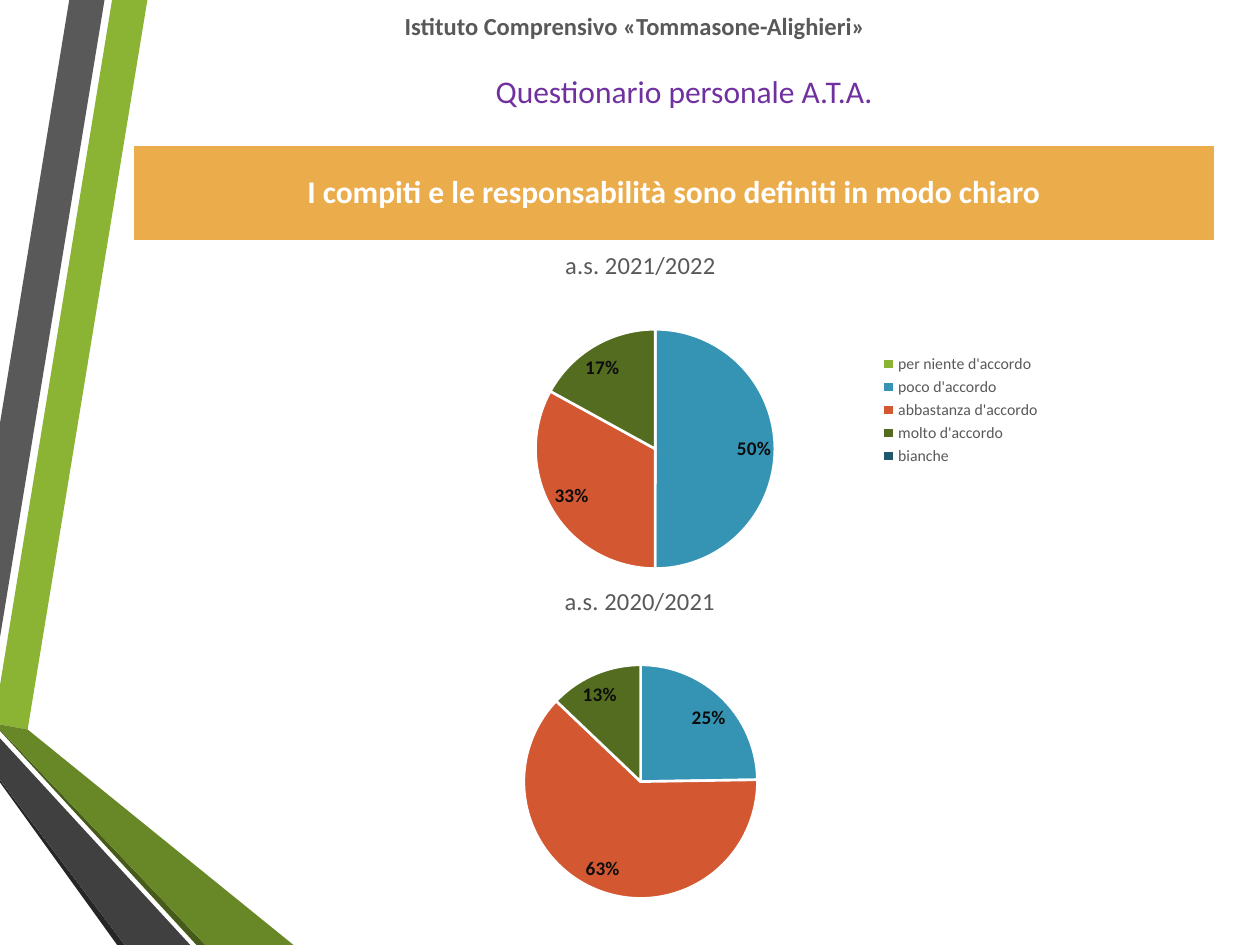
"""Build the staff questionnaire slide with two yearly pie charts."""
import pptx
import pptx.chart.data
import pptx.enum.chart
import pptx.enum.text
import pptx.oxml
import pptx.oxml.ns
import pptx.util
from pptx.dml.color import RGBColor
from pptx.util import Inches

FONT = "Calibri"
COLORS = {
    "green": "8BB434", "gray": "595959", "black": "262626", "olive": "465A1A",
    "moss": "688727", "charcoal": "404040", "blue": "3594B4", "red": "D35731",
    "forest": "536C1F", "petrol": "20596C", "amber": "EBAC4B",
    "purple": "7030A0", "white": "FFFFFF", "ink": "0D0D0D",
}
SCHOOL = "Istituto Comprensivo «Tommasone-Alighieri»"
TITLE = "Questionario personale A.T.A."
QUESTION = "I compiti e le responsabilità sono definiti in modo chiaro"
ANSWERS = ["per niente d'accordo", "poco d'accordo", "abbastanza d'accordo",
           "molto d'accordo", "bianche"]
SLICES = ["green", "blue", "red", "forest", "petrol"]
RIBBONS = [
    ("green", [(0, 5.44), (0, 5.75), (0.22, 5.79), (1.17, 0), (0.89, 0)]),
    ("gray", [(0.83, 0), (0.55, 0), (0, 3.36), (0, 5.06)]),
    ("black", [(0, 6.19), (0, 6.21), (0.93, 7.5), (0.99, 7.5)]),
    ("olive", [(0, 5.79), (0, 5.8), (1.56, 7.5), (1.63, 7.5)]),
    ("moss", [(0, 5.79), (1.63, 7.5), (2.33, 7.5), (0.22, 5.79), (0, 5.75)]),
    ("charcoal", [(0, 6.19), (0.99, 7.5), (1.51, 7.5), (0, 5.86)]),
]
CHARTS = [
    {"title": "a.s. 2020/2021", "cats": ["1", "2", "3", "4", "5"],
     "values": [0, 25, 63, 13, 0], "box": (2.8, 4.49, 4.57, 2.81),
     "title_at": (0.36, 0.04), "pie": (0.29, 0.28, 0.42, 0.66), "legend": None},
    {"title": "a.s. 2021/2022", "cats": ANSWERS,
     "values": [0, 50, 33, 17, 0], "box": (3.35, 1.85, 5, 2.81),
     "title_at": (0.22, 0.03), "pie": (0.18, 0.27, 0.38, 0.68),
     "legend": (0.72, 0.33, 0.27, 0.34)},
]


def rgb(name):
    return RGBColor.from_string(COLORS[name])


def style(font, size, color, bold=False):
    font.name, font.size, font.bold = FONT, pptx.util.Pt(size), bold
    font.color.rgb = rgb(color)


def write(tf, text, size, color, bold=False):
    p = tf.paragraphs[0]
    p.alignment = pptx.enum.text.PP_ALIGN.CENTER
    r = p.add_run()
    r.text = text
    style(r.font, size, color, bold)


def set_layout(element, index, position, inner=False):
    for old in element.findall(pptx.oxml.ns.qn("c:layout")):
        element.remove(old)
    target = '<c:layoutTarget val="inner"/>' if inner else ""
    modes = '<c:xMode val="edge"/><c:yMode val="edge"/>'
    sizes = "".join(f'<c:{k} val="{v}"/>' for k, v in zip("xywh", position))
    element.insert(index, pptx.oxml.parse_xml(
        f'<c:layout {pptx.oxml.ns.nsdecls("c")}><c:manualLayout>'
        f'{target}{modes}{sizes}</c:manualLayout></c:layout>'))


def add_ribbon(s, color, points):
    corners = [(Inches(x), Inches(y)) for x, y in points]
    builder = s.shapes.build_freeform(*corners[0])
    builder.add_line_segments(corners[1:], close=True)
    sp = builder.convert_to_shape()
    sp.shadow.inherit = False
    sp.fill.solid()
    sp.fill.fore_color.rgb = rgb(color)
    sp.line.fill.background()


def add_pie(s, item):
    data = pptx.chart.data.CategoryChartData()
    data.categories = item["cats"]
    data.add_series("Series 1", item["values"])
    chart = s.shapes.add_chart(pptx.enum.chart.XL_CHART_TYPE.PIE,
                               *map(Inches, item["box"]), data).chart
    chart.font.name, chart.font.size = FONT, pptx.util.Pt(10)
    chart.has_title = True
    write(chart.chart_title.text_frame, item["title"], 14, "gray")
    chart.chart_title.include_in_layout = False
    set_layout(chart.chart_title._element, 1, item["title_at"])
    plot = chart.plots[0]
    plot.vary_by_categories = True
    set_layout(plot._element.getparent(), 0, item["pie"], inner=True)
    for i, color in enumerate(SLICES):
        fmt = plot.series[0].points[i].format
        fmt.fill.solid()
        fmt.fill.fore_color.rgb = rgb(color)
        fmt.line.color.rgb = rgb("white")
        fmt.line.width = pptx.util.Pt(1.5)
    labels = plot.series[0].data_labels
    labels.show_value = True
    labels.number_format, labels.number_format_is_linked = '0"%";;', False
    labels.position = pptx.enum.chart.XL_LABEL_POSITION.BEST_FIT
    style(labels.font, 11, "ink", True)
    chart.has_legend = item["legend"] is not None
    if chart.has_legend:
        chart.legend.position = pptx.enum.chart.XL_LEGEND_POSITION.RIGHT
        chart.legend.include_in_layout = False
        style(chart.legend.font, 9, "gray")
        set_layout(chart.legend._element, 1, item["legend"])


def add_banner(s):
    table = s.shapes.add_table(1, 1, *map(Inches, (1.06, 1.15, 8.58, 0.76))).table
    table.first_row = table.horz_banding = False
    cell = table.cell(0, 0)
    cell.fill.solid()
    cell.fill.fore_color.rgb = rgb("amber")
    cell.vertical_anchor = pptx.enum.text.MSO_ANCHOR.MIDDLE
    write(cell.text_frame, QUESTION, 18, "white", True)


def main():
    prs = pptx.Presentation()
    prs.slide_width, prs.slide_height = Inches(10), Inches(7.5)
    s = prs.slides.add_slide(prs.slide_layouts[5])
    for color, points in RIBBONS:
        add_ribbon(s, color, points)
    for item in CHARTS:
        add_pie(s, item)
    add_banner(s)
    sp = s.shapes.add_textbox(*map(Inches, (1.14, 0.04, 7.8, 0.34)))
    sp.text_frame.word_wrap = True
    write(sp.text_frame, SCHOOL, 14, "gray", True)
    sp = s.shapes.title
    sp.left, sp.top, sp.width, sp.height = map(Inches, (1.14, 0.52, 8.58, 0.4))
    sp.text_frame.vertical_anchor = pptx.enum.text.MSO_ANCHOR.TOP
    write(sp.text_frame, TITLE, 18, "purple")
    prs.save("out.pptx")


if __name__ == "__main__":
    main()
